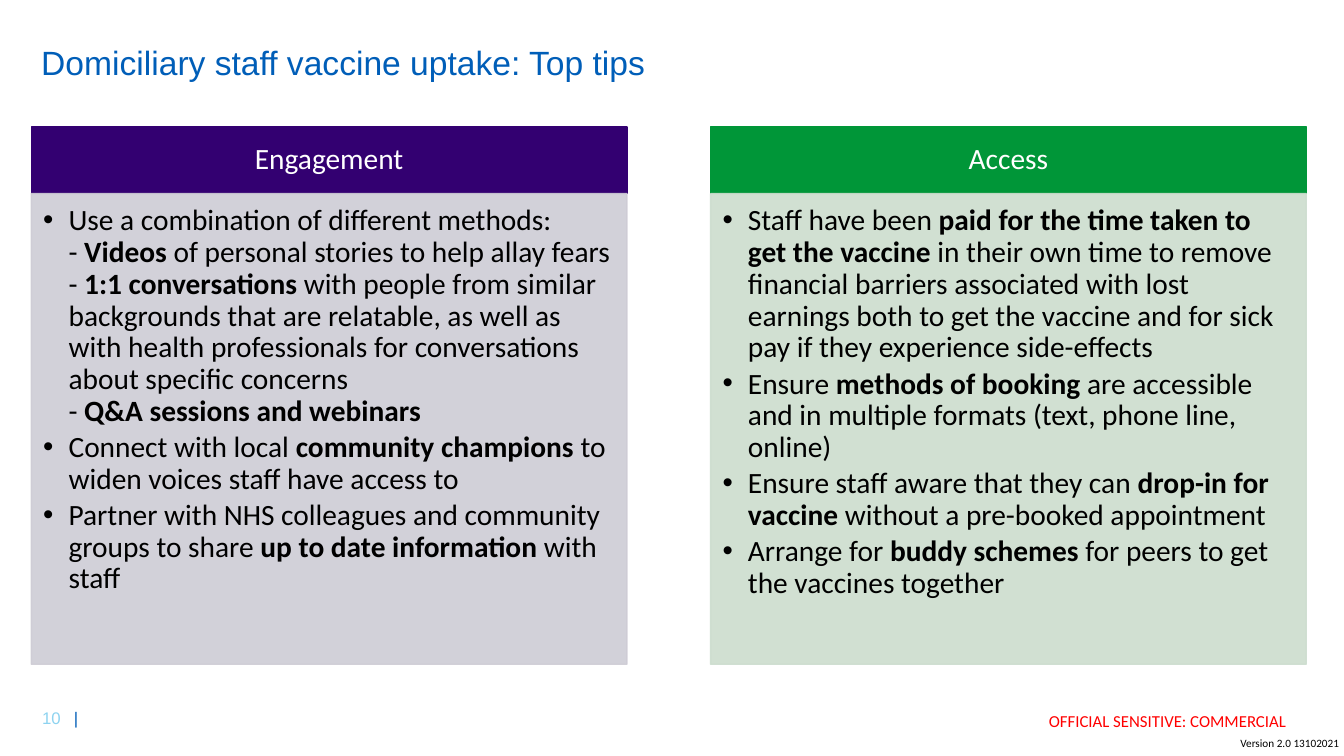
"""Build the slide of top tips for domiciliary staff vaccine uptake."""
import pptx
import pptx.dml.color
import pptx.enum.shapes
import pptx.enum.text
import pptx.oxml
import pptx.oxml.ns
import pptx.util
from lxml import etree

Cm, Pt = pptx.util.Cm, pptx.util.Pt
ALIGN = pptx.enum.text.PP_ALIGN
ANCHOR = pptx.enum.text.MSO_ANCHOR

TITLE = "Domiciliary staff vaccine uptake: Top tips"
MARKING = "OFFICIAL SENSITIVE: COMMERCIAL"
VERSION = "Version 2.0 13102021"
PAGE_NUMBER = "10"

COLUMNS = [
    {
        "heading": "Engagement", "dark": "330071", "light": "CECCD5",
        "tips": [
            "Use a combination of different methods:\n"
            "- **Videos** of personal stories to help allay fears\n"
            "- **1:1 conversations **with people from similar backgrounds that are "
            "relatable, as well as with health professionals for conversations "
            "about specific concerns\n"
            "- **Q&A sessions and webinars**",
            "Connect with local **community champions **to widen voices staff have access to",
            "Partner with NHS colleagues and community groups to share "
            "**up to date information **with staff",
        ],
    },
    {
        "heading": "Access", "dark": "009638", "light": "CCDDCE",
        "tips": [
            "Staff have been **paid for the time taken to get the vaccine** in their own "
            "time to remove financial barriers associated with lost earnings both to get "
            "the vaccine and for sick pay if they experience side-effects",
            "Ensure **methods of booking **are accessible and in multiple formats "
            "(text, phone line, online)",
            "Ensure staff aware that they can **drop-in for vaccine** without a "
            "pre-booked appointment",
            "Arrange for **buddy schemes **for peers to get the vaccines together",
        ],
    },
]

COLUMN_LEFT, COLUMN_STEP, COLUMN_WIDTH = 0.79, 17.12, 15.01
HEADING_TOP, HEADING_HEIGHT, TIPS_HEIGHT = 3.2, 1.68, 11.86
TIP_INDENT = 0.64


def colour(target, value):
    target.rgb = pptx.dml.color.RGBColor.from_string(value)


def set_font(font, size, name, value):
    font.size, font.name = Pt(size), name
    colour(font.color, value)


def add_element(parent, tag, **attributes):
    element = etree.SubElement(parent, pptx.oxml.ns.qn(tag))
    for key, value in attributes.items():
        element.set(key, str(value))
    return element


def add_label(slide, box, text, size, name, value, anchor=ANCHOR.TOP, align=ALIGN.LEFT, wrap=True):
    frame = slide.shapes.add_textbox(*map(Cm, box)).text_frame
    frame.word_wrap, frame.vertical_anchor = wrap, anchor
    paragraph = frame.paragraphs[0]
    paragraph.alignment = align
    paragraph.add_run().text = text
    set_font(paragraph.font, size, name, value)
    return paragraph


def add_panel(slide, box, value, insets, anchor, opacity=100):
    panel = slide.shapes.add_shape(pptx.enum.shapes.MSO_SHAPE.RECTANGLE, *map(Cm, box))
    panel.shadow.inherit = False
    panel.fill.solid()
    colour(panel.fill.fore_color, value)
    colour(panel.line.color, value)
    panel.line.width = Pt(1)
    if opacity < 100:
        for shade in panel._element.spPr.iter(pptx.oxml.ns.qn("a:srgbClr")):
            add_element(shade, "a:alpha", val=opacity * 1000)
    frame = panel.text_frame
    frame.word_wrap, frame.vertical_anchor = True, anchor
    frame.margin_left, frame.margin_top, frame.margin_right, frame.margin_bottom = map(Cm, insets)
    return frame


def write_tip(paragraph, tip):
    properties = paragraph._p.get_or_add_pPr()
    properties.set("marL", str(Cm(TIP_INDENT)))
    properties.set("indent", str(-Cm(TIP_INDENT)))
    add_element(properties, "a:buFont", typeface="Arial")
    add_element(properties, "a:buChar", char="•")
    paragraph.level = 1
    paragraph.alignment = ALIGN.LEFT
    paragraph.line_spacing, paragraph.space_after = 0.9, Pt(3.15)
    set_font(paragraph.font, 21, "Calibri", "000000")
    for part, phrase in enumerate(tip.split("**")):
        for row, words in enumerate(phrase.split("\n")):
            if row:
                paragraph.add_line_break()
            if words:
                run = paragraph.add_run()
                run.text = words
                run.font.bold = part % 2 == 1


def add_column(slide, left, column):
    heading_box = (left, HEADING_TOP, COLUMN_WIDTH, HEADING_HEIGHT)
    heading_frame = add_panel(slide, heading_box, column["dark"],
                              (0.41, 0.23, 0.41, 0.23), ANCHOR.MIDDLE)
    heading = heading_frame.paragraphs[0]
    heading.add_run().text = column["heading"]
    heading.alignment, heading.line_spacing = ALIGN.CENTER, 0.9
    set_font(heading.font, 21, "Calibri", "FFFFFF")

    tips_box = (left, HEADING_TOP + HEADING_HEIGHT, COLUMN_WIDTH, TIPS_HEIGHT)
    tips_frame = add_panel(slide, tips_box, column["light"],
                           (0.3, 0.3, 0.41, 0.46), ANCHOR.TOP, opacity=90)
    for index, tip in enumerate(column["tips"]):
        write_tip(tips_frame.add_paragraph() if index else tips_frame.paragraphs[0], tip)


def add_page_number(slide):
    frame = slide.shapes.add_textbox(*map(Cm, (0.81, 17.7, 1.8, 0.76))).text_frame
    frame.word_wrap = True
    paragraph = frame.paragraphs[0]
    tabs = add_element(paragraph._p.get_or_add_pPr(), "a:tabLst")
    add_element(tabs, "a:tab", pos=Cm(0.8), algn="l")
    set_font(paragraph.font, 12, "Arial", "8DD3F0")
    for words, value in ((PAGE_NUMBER + "\t", "8DD3F0"), ("|", "005EB8")):
        run = paragraph.add_run()
        run.text = words
        colour(run.font.color, value)


def main():
    deck = pptx.Presentation()
    deck.slide_width, deck.slide_height = Cm(33.87), Cm(19.05)
    slide = deck.slides.add_slide(deck.slide_layouts[6])
    add_page_number(slide)
    add_label(slide, (25.96, 17.65, 6.93, 1.02), MARKING, 12, "Calibri", "FF0000",
              ANCHOR.MIDDLE, ALIGN.CENTER)
    title = add_label(slide, (0.79, 0.79, 27.99, 1.7), TITLE, 24, "Arial", "005EB8", ANCHOR.MIDDLE)
    title.line_spacing = 0.9
    for index, column in enumerate(COLUMNS):
        add_column(slide, COLUMN_LEFT + index * COLUMN_STEP, column)
    add_label(slide, (31.01, 18.44, 3.07, 0.61), VERSION, 8, "Calibri", "000000", wrap=False)
    deck.save("out.pptx")


if __name__ == "__main__":
    main()
